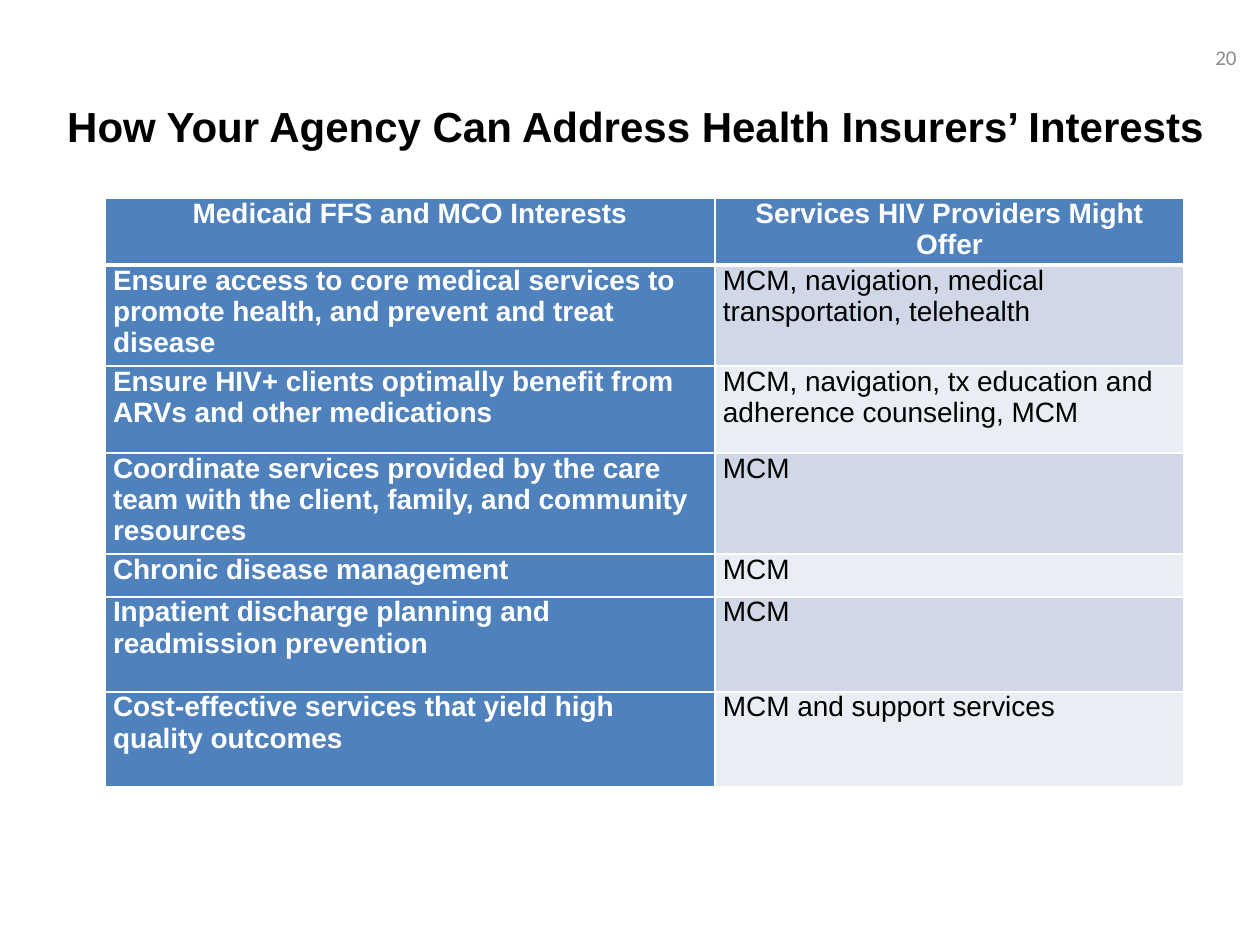
from lxml.etree import SubElement
from pptx import Presentation
from pptx.dml.color import RGBColor
from pptx.enum.text import MSO_ANCHOR, MSO_AUTO_SIZE, PP_ALIGN
from pptx.oxml.ns import qn
from pptx.util import Emu, Pt

PX = 914400 // 126
BLACK = RGBColor(0x00, 0x00, 0x00)
WHITE = RGBColor(0xFF, 0xFF, 0xFF)
GRAY = RGBColor(0x8C, 0x8C, 0x8C)
BLUE = RGBColor(0x4F, 0x81, 0xBD)
BANDS = (RGBColor(0xD0, 0xD8, 0xE8), RGBColor(0xE9, 0xED, 0xF4))

TITLE = "How Your Agency Can Address Health Insurers’ Interests"
PAGE_NUMBER = "20"
ROWS = [
    ("Medicaid FFS and MCO Interests", "Services HIV Providers Might Offer"),
    ("Ensure access to core medical services to promote health, and prevent and treat disease",
     "MCM, navigation, medical transportation, telehealth"),
    ("Ensure HIV+ clients optimally benefit from ARVs and other medications",
     "MCM, navigation, tx education and adherence counseling, MCM"),
    ("Coordinate services provided by the care team with the client, family, and community resources",
     "MCM"),
    ("Chronic disease management", "MCM"),
    ("Inpatient discharge planning and readmission prevention", "MCM"),
    ("Cost-effective services that yield high quality outcomes", "MCM and support services"),
]
COLUMN_WIDTHS = (610, 469)
ROW_HEIGHTS = (67, 101, 87, 101, 43, 95, 95)

TITLE_BOX = (42, 63, 1187, 126)
NUMBER_BOX = (955, 32, 294, 50)
TABLE_ORIGIN = (105, 198)

TITLE_FONT = {"name": "Arial", "size": Pt(24), "bold": True}
CELL_FONT = {"name": "Arial", "size": Pt(16)}
NUMBER_FONT = {"name": "Calibri", "size": Pt(12)}
FRAME_FORMAT = {"word_wrap": True, "auto_size": MSO_AUTO_SIZE.NONE,
                "vertical_anchor": MSO_ANCHOR.MIDDLE}
CELL_FORMAT = {"margin_left": 8 * PX, "margin_right": 8 * PX, "margin_top": 0,
               "margin_bottom": 0, "vertical_anchor": MSO_ANCHOR.TOP}


def to_emu(lengths):
    return [Emu(length * PX) for length in lengths]


def apply(target, values):
    for name, value in values.items():
        setattr(target, name, value)


def write(text_frame, text, font, color, alignment):
    paragraph = text_frame.paragraphs[0]
    paragraph.alignment = alignment
    run = paragraph.add_run()
    run.text = text
    apply(run.font, font)
    run.font.color.rgb = color


def add_borders(cell, widths):
    """Draw white cell borders; widths maps a side (L, R, T, B) to points."""
    properties = cell._tc.get_or_add_tcPr()
    for side, width in widths.items():
        line = SubElement(properties, qn(f"a:ln{side}"), w=str(Pt(width)))
        fill = SubElement(line, qn("a:solidFill"))
        SubElement(fill, qn("a:srgbClr"), val=str(WHITE))


def add_title(slide):
    title = slide.shapes.title
    apply(title, dict(zip(("left", "top", "width", "height"), to_emu(TITLE_BOX))))
    apply(title.text_frame, FRAME_FORMAT)
    write(title.text_frame, TITLE, TITLE_FONT, BLACK, PP_ALIGN.CENTER)


def add_interest_table(slide):
    size = (sum(COLUMN_WIDTHS), sum(ROW_HEIGHTS))
    table = slide.shapes.add_table(
        len(ROWS), len(COLUMN_WIDTHS), *to_emu(TABLE_ORIGIN + size)).table
    for column, width in zip(table.columns, to_emu(COLUMN_WIDTHS)):
        column.width = width
    for row, height in zip(table.rows, to_emu(ROW_HEIGHTS)):
        row.height = height

    for row_index, texts in enumerate(ROWS):
        is_header = row_index == 0
        for column_index, text in enumerate(texts):
            is_blue = is_header or column_index == 0
            cell = table.cell(row_index, column_index)
            apply(cell, CELL_FORMAT)
            add_borders(cell, {"L": 1, "R": 1, "T": 3 if row_index == 1 else 1,
                               "B": 3 if is_header else 1})
            cell.fill.solid()
            cell.fill.fore_color.rgb = BLUE if is_blue else BANDS[(row_index - 1) % 2]
            write(cell.text_frame, text, {**CELL_FONT, "bold": is_blue},
                  WHITE if is_blue else BLACK,
                  PP_ALIGN.CENTER if is_header else PP_ALIGN.LEFT)
            if not is_header:
                cell.text_frame.paragraphs[0].space_after = Pt(2)


def add_page_number(slide):
    text_frame = slide.shapes.add_textbox(*to_emu(NUMBER_BOX)).text_frame
    apply(text_frame, FRAME_FORMAT)
    write(text_frame, PAGE_NUMBER, NUMBER_FONT, GRAY, PP_ALIGN.RIGHT)


def main():
    presentation = Presentation()
    presentation.slide_width, presentation.slide_height = to_emu((1260, 945))
    slide = presentation.slides.add_slide(presentation.slide_layouts[5])
    add_title(slide)
    add_interest_table(slide)
    add_page_number(slide)
    presentation.save("out.pptx")


if __name__ == "__main__":
    main()
